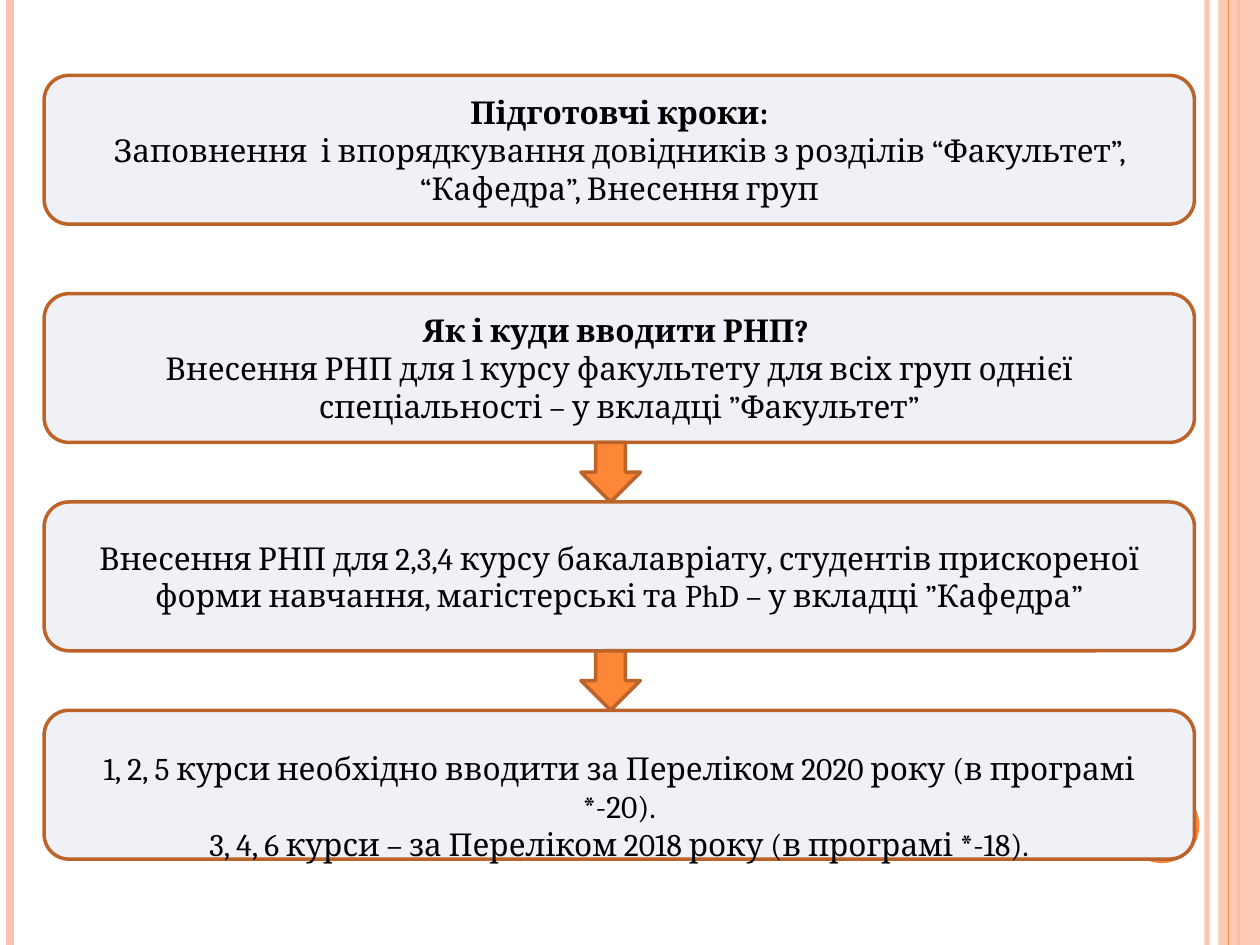
from dataclasses import dataclass
from lxml.etree import SubElement
from pptx import Presentation
from pptx.dml.color import RGBColor as RGB
from pptx.enum.shapes import MSO_CONNECTOR as LINE, MSO_SHAPE as SHAPE
from pptx.enum.text import MSO_ANCHOR as ANCHOR, PP_ALIGN as ALIGN
from pptx.oxml.ns import qn
from pptx.util import Cm, Pt


@dataclass(frozen=True)
class Theme:
    pale: RGB = RGB(0xFE, 0xC3, 0xAE)
    accent: RGB = RGB(0xFE, 0x86, 0x37)
    outline: RGB = RGB(0xBC, 0x63, 0x29)
    card: RGB = RGB(0xEF, 0xF1, 0xF7)
    text: RGB = RGB(0, 0, 0)
    font: str = "Cambria"
    size: Pt = Pt(18)
    border: Pt = Pt(2)


THEME = Theme()
WIDTH, HEIGHT = 25.4, 19.05
STEPS = [
    ("Підготовчі кроки:",
     ["Заповнення  і впорядкування довідників з розділів “Факультет”, "
      "“Кафедра”, Внесення груп"]),
    ("Як і куди вводити РНП? ",
     ["Внесення РНП для 1 курсу факультету для всіх груп однієї "
      "спеціальності – у вкладці ”Факультет”"]),
    (None,
     ["Внесення РНП для 2,3,4 курсу бакалавріату, студентів прискореної "
      "форми навчання, магістерські та PhD – у вкладці ”Кафедра”"]),
    (None,
     ["1, 2, 5 курси необхідно вводити за Переліком 2020 року (в програмі *-20).",
      "3, 4, 6 курси – за Переліком 2018 року (в програмі *-18)."]),
]


def set_alpha(fill_parent, percent):
    color = next(fill_parent.iter(qn("a:srgbClr")))
    SubElement(color, qn("a:alpha")).set("val", str(percent * 1000))


def add_shape(s, kind, box, fill, outline=None):
    sp = s.shapes.add_shape(kind, *map(Cm, box))
    sp.shadow.inherit = False
    sp.fill.solid()
    sp.fill.fore_color.rgb = fill
    if outline is None:
        sp.line.fill.background()
    else:
        sp.line.color.rgb = outline
        sp.line.width = THEME.border
    return sp


def add_rule(s, x, top, height, color, width, alpha=None):
    cx = s.shapes.add_connector(
        LINE.STRAIGHT, Cm(x), Cm(top), Cm(x), Cm(top + height))
    cx.line.color.rgb = color
    cx.line.width = Pt(width)
    SubElement(cx._element.spPr, qn("a:effectLst"))
    if alpha:
        set_alpha(cx._element.spPr, alpha)


def add_frame(s, left, top, width, height):
    right = left + width
    add_rule(s, right - 1.07, top, height, THEME.pale, 3, 93)
    add_rule(s, left + 0.2, top, height, THEME.pale, 4.5)
    add_rule(s, right - 0.43, top, height, THEME.accent, 1.5)
    band = add_shape(s, SHAPE.RECTANGLE, (right - 0.84, top, 0.84, height), THEME.pale)
    set_alpha(band._element.spPr, 87)
    add_rule(s, right - 0.63, top, height, THEME.accent, 0.75)
    add_shape(s, SHAPE.OVAL, (right - 2.74, top + 15.88, 1.52, 1.52), THEME.accent)


def add_step(s, box, heading, lines, insets=None):
    sp = add_shape(s, SHAPE.ROUNDED_RECTANGLE, box, THEME.card, THEME.outline)
    tf = sp.text_frame
    settings = {"word_wrap": True, "vertical_anchor": ANCHOR.MIDDLE, **(insets or {})}
    for name, value in settings.items():
        setattr(tf, name, value)
    texts = [heading, *lines] if heading else lines
    for i, text in enumerate(texts):
        p = tf.paragraphs[0] if i == 0 else tf.add_paragraph()
        p.alignment = ALIGN.CENTER
        r = p.add_run()
        r.text = text
        font = {"name": THEME.font, "size": THEME.size, "bold": text == heading}
        for name, value in font.items():
            setattr(r.font, name, value)
        r.font.color.rgb = THEME.text


def add_flow(s, left, top, width, height):
    card, gap = 3, 1.2
    pitch = card + gap
    first_flow_top = top + height - 3 * card - 2 * gap
    tops = [top] + [first_flow_top + i * pitch for i in range(3)]
    low_text = {"margin_top": Cm(0.85), "margin_bottom": Cm(0)}
    for i, (y, (heading, lines)) in enumerate(zip(tops, STEPS)):
        insets = low_text if i == len(STEPS) - 1 else None
        add_step(s, (left, y, width, card), heading, lines, insets)
    for y in tops[1:3]:
        add_shape(s, SHAPE.DOWN_ARROW, (left + 10.82, y + card, gap, gap),
                  THEME.accent, THEME.outline)


def main():
    prs = Presentation()
    prs.slide_width, prs.slide_height = Cm(WIDTH), Cm(HEIGHT)
    s = prs.slides.add_slide(prs.slide_layouts[6])
    add_frame(s, 0, 0, WIDTH, HEIGHT)
    add_flow(s, 0.89, 1.52, 23.19, 15.8)
    prs.save("out.pptx")


if __name__ == "__main__":
    main()
